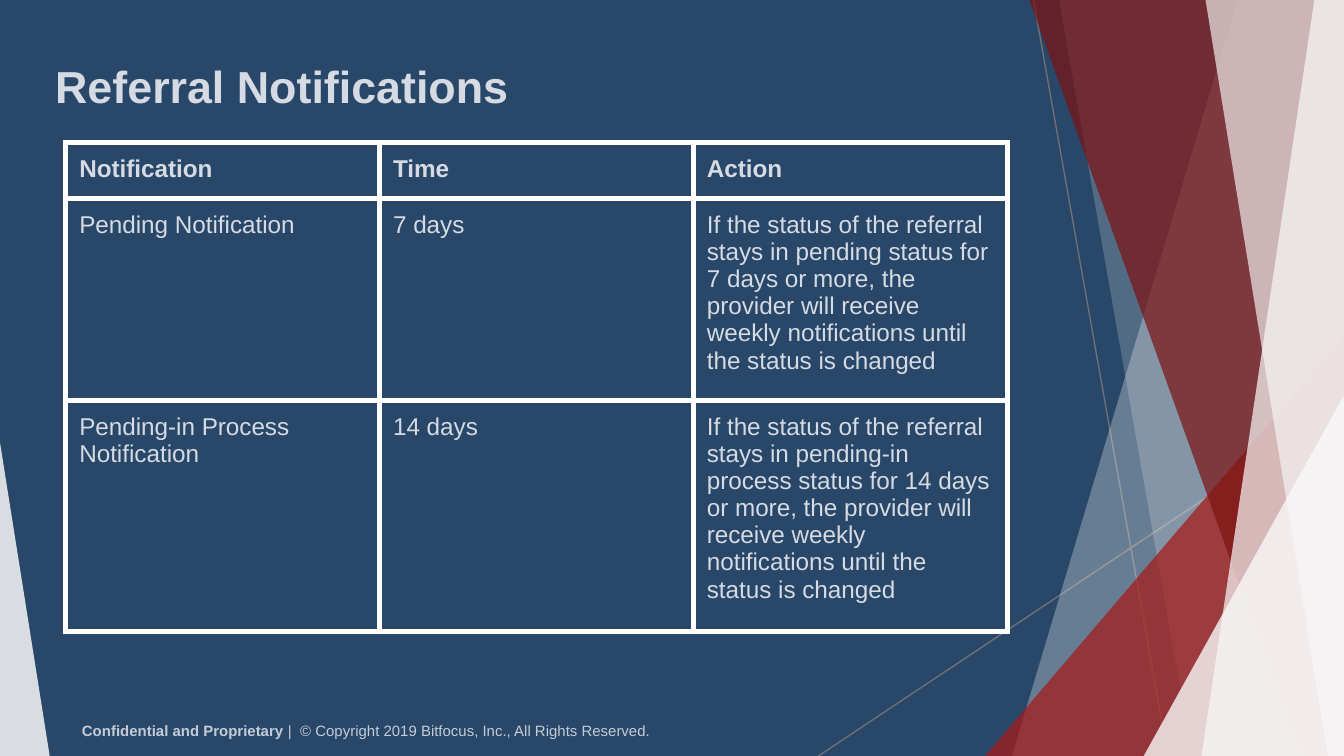
"""Build the Referral Notifications slide with its table and angled panels."""
from lxml import etree
from pptx import Presentation
from pptx.dml.color import RGBColor
from pptx.enum.shapes import MSO_CONNECTOR, MSO_SHAPE
from pptx.enum.text import MSO_ANCHOR
from pptx.oxml.ns import qn
from pptx.util import Inches, Pt

STRAIGHT = MSO_CONNECTOR.STRAIGHT
TRIANGLE = MSO_SHAPE.ISOSCELES_TRIANGLE
MIDDLE, TOP = MSO_ANCHOR.MIDDLE, MSO_ANCHOR.TOP
FONT, PALE, WHITE = "Arial", "D5DAE3", "F8F8F8"

deck = Presentation()
deck.slide_width, deck.slide_height = Inches(10), Inches(5.625)
page = deck.slides.add_slide(deck.slide_layouts[6])


def color(value):
    return RGBColor.from_string(value)


def place(across, down):
    return int(deck.slide_width * across / 100), int(deck.slide_height * down / 100)


page.background.fill.solid()
page.background.fill.fore_color.rgb = color("294869")

for start, end in [((76.9, 0), (86.9, 100)), ((100, 53.7), (60.9, 100))]:
    line = page.shapes.add_connector(STRAIGHT, *place(*start), *place(*end))
    line.line.color.rgb = color("6F7074")
    line.line.width = Pt(0.75)
    etree.SubElement(line._element.spPr, qn("a:effectLst"))

panels = [
    ("band", (92.1, 75.3), WHITE, 30),
    ("band", (78.8, 88.7), WHITE, 20),
    ("triangle", (73.3, 44.4, 26.7, 1), "A61A17", 72),
    ("band", (76.6, 96.8), "7C1311", 70),
    ("band", (97.8, 89.4), "FAFAFA", 70),
    ("band", (89.7, 98.8), WHITE, 65),
    ("triangle", (85.1, 52.3, 14.9, 1), WHITE, 80),
    ("triangle", (0, 58.5, 3.7, 0), WHITE, 85),
]
for kind, geometry, fill, opacity in panels:
    if kind == "band":
        upper, lower = geometry
        outline = page.shapes.build_freeform(*place(upper, 0), scale=1.0)
        outline.add_line_segments([place(100, 0), place(100, 100), place(lower, 100)], close=True)
        panel = outline.convert_to_shape()
    else:
        left, top, width, apex = geometry
        panel = page.shapes.add_shape(TRIANGLE, *place(left, top), *place(width, 100 - top))
        panel.adjustments[0] = apex
    panel.shadow.inherit = False
    panel.line.fill.background()
    panel.fill.solid()
    panel.fill.fore_color.rgb = color(fill)
    tint = panel._element.spPr.find(f"{qn('a:solidFill')}/{qn('a:srgbClr')}")
    etree.SubElement(tint, qn("a:alpha"), val=str(opacity * 1000))

texts = [
    ((5.4, 94.9), (76.3, 3.6), 8, "C5CCD8",
     [("Confidential and Proprietary ", True),
      ("|  © Copyright 2019 Bitfocus, Inc., All Rights Reserved.", False)]),
    ((3.4, 6.4), (93.2, 9.8), 24, PALE, [("Referral Notifications", True)]),
]
for corner, extent, size, ink, spans in texts:
    box = page.shapes.add_textbox(*place(*corner), *place(*extent))
    frame = box.text_frame
    frame.word_wrap = True
    frame.vertical_anchor = MIDDLE
    frame.margin_left = frame.margin_right = Inches(0.07)
    frame.margin_top = frame.margin_bottom = Inches(0.04)
    para = frame.paragraphs[0]
    para.font.name, para.font.size = FONT, Pt(size)
    para.font.color.rgb = color(ink)
    for words, bold in spans:
        span = para.add_run()
        span.text = words
        span.font.bold = bold

rows = [
    ("Notification", "Time", "Action"),
    ("Pending Notification", "7 days",
     "If the status of the referral stays in pending status for 7 days or more, "
     "the provider will receive weekly notifications until the status is changed"),
    ("Pending-in Process Notification", "14 days",
     "If the status of the referral stays in pending-in process status for 14 days or more, "
     "the provider will receive weekly notifications until the status is changed"),
]
heights = [7.1, 25.1, 28.6]
column = 23.35
table = page.shapes.add_table(3, 3, *place(4.9, 18.8), *place(3 * column, sum(heights))).table
for table_column in table.columns:
    table_column.width = place(column, 0)[0]
for r, (height, entries) in enumerate(zip(heights, rows)):
    table.rows[r].height = place(0, height)[1]
    for c, words in enumerate(entries):
        cell = table.cell(r, c)
        cell.fill.background()
        cell.vertical_anchor = TOP
        cell.margin_left = cell.margin_right = Inches(0.1)
        cell.margin_top = cell.margin_bottom = Inches(0.1)
        cell.text = words
        para = cell.text_frame.paragraphs[0]
        para.font.name, para.font.size, para.font.bold = FONT, Pt(13), r == 0
        para.font.color.rgb = color(PALE)
        properties = cell._tc.get_or_add_tcPr()
        for position, side in enumerate(("lnL", "lnR", "lnT", "lnB")):
            border = etree.Element(qn(f"a:{side}"), w=str(Pt(3)))
            solid = etree.SubElement(border, qn("a:solidFill"))
            etree.SubElement(solid, qn("a:srgbClr"), val="FFFFFF")
            properties.insert(position, border)

deck.save("out.pptx")
